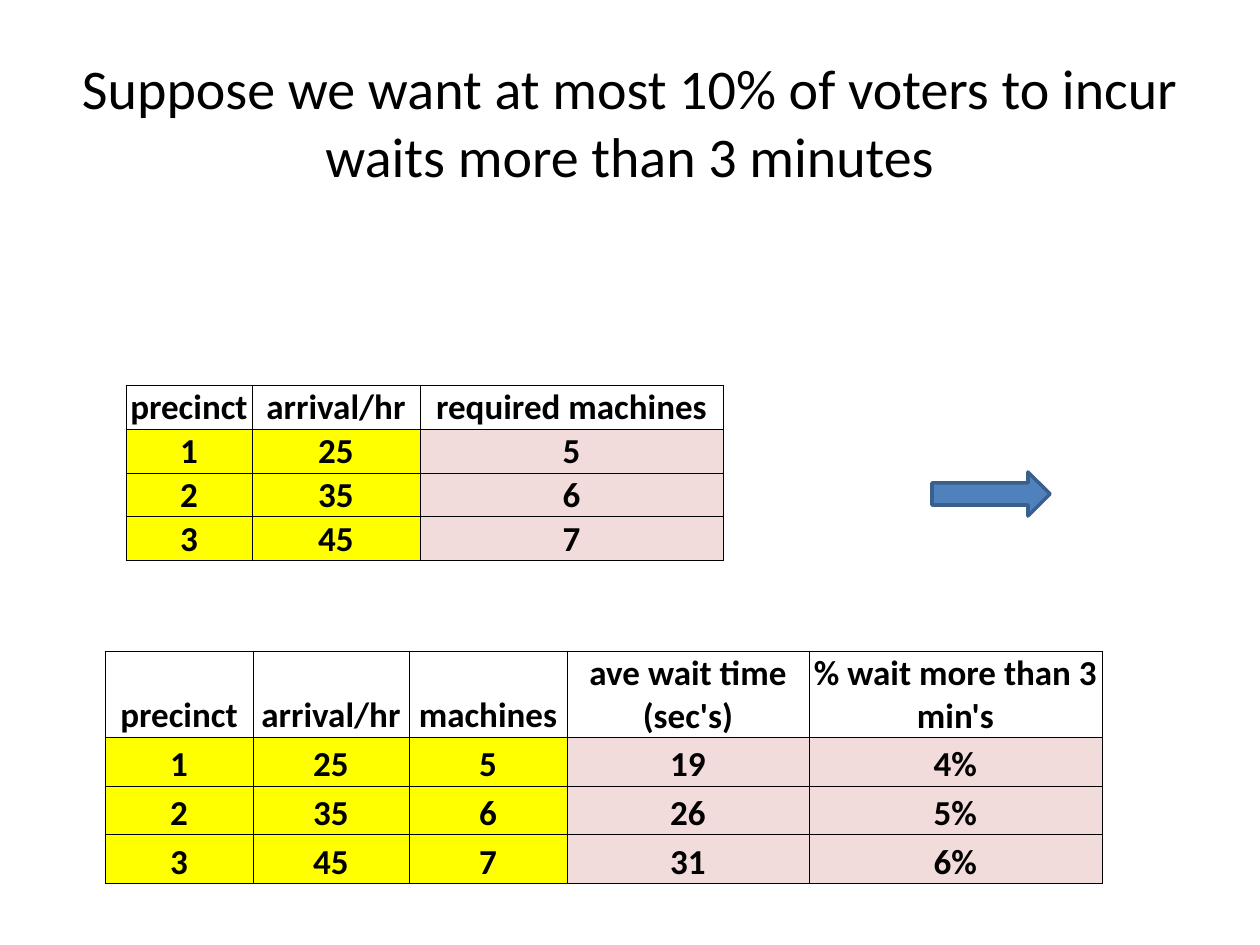
from lxml.etree import SubElement
from pptx import Presentation
from pptx.dml.color import RGBColor
from pptx.enum.shapes import MSO_SHAPE as Shape
from pptx.enum.text import MSO_ANCHOR as Anchor, PP_ALIGN as Align
from pptx.oxml.ns import qn
from pptx.util import Emu, Pt

PX = 914400 / 126
FONT = "Calibri"
COLORS = {
    "text": "000000",
    "border": "000000",
    "input": "FFFF00",
    "result": "F2DCDB",
    "arrow": "4F81BD",
    "arrow_line": "3A5F8C",
}


def px(length):
    """Turn a length in px into EMU."""
    return Emu(round(length * PX))


def color(name):
    """Look up a named colour."""
    return RGBColor.from_string(COLORS[name])


def style_paragraph(paragraph, size, bold=False):
    """Centre a paragraph and set its font."""
    paragraph.alignment = Align.CENTER
    font = paragraph.font
    font.name, font.size, font.bold = FONT, Pt(size), bold
    font.color.rgb = color("text")


def add_title(slide, box, text):
    """Write the slide title in the middle of its box."""
    frame = slide.shapes.add_textbox(*map(px, box)).text_frame
    frame.word_wrap = True
    frame.vertical_anchor = Anchor.MIDDLE
    frame.text = text
    style_paragraph(frame.paragraphs[0], 32)


def add_arrow(slide, box):
    """Draw the block arrow that points right."""
    arrow = slide.shapes.add_shape(Shape.RIGHT_ARROW, *map(px, box))
    arrow.shadow.inherit = False
    arrow.fill.solid()
    arrow.fill.fore_color.rgb = color("arrow")
    arrow.line.color.rgb = color("arrow_line")
    arrow.line.width = Pt(2)


def add_borders(cell):
    """Give a cell a thin line on all four sides."""
    properties = cell._tc.get_or_add_tcPr()
    for side in ("a:lnL", "a:lnR", "a:lnT", "a:lnB"):
        line = SubElement(properties, qn(side), w=str(Pt(0.5)))
        fill = SubElement(line, qn("a:solidFill"))
        SubElement(fill, qn("a:srgbClr"), val=COLORS["border"])


def style_cell(cell, fill_name):
    """Set the margins, borders, fill and font of a cell."""
    cell.margin_left = cell.margin_right = cell.margin_top = px(1)
    cell.margin_bottom = 0
    cell.vertical_anchor = Anchor.BOTTOM
    add_borders(cell)
    if fill_name:
        cell.fill.solid()
        cell.fill.fore_color.rgb = color(fill_name)
    else:
        cell.fill.background()
    style_paragraph(cell.text_frame.paragraphs[0], 20, bold=True)


def add_precinct_table(slide, left, top, widths, heights, rows, input_count):
    """Build a table whose first input_count columns hold inputs, the rest results."""
    box = map(px, (left, top, sum(widths), sum(heights)))
    table = slide.shapes.add_table(len(rows), len(widths), *box).table
    table.horz_banding = table.first_row = False
    for column, width in zip(table.columns, widths):
        column.width = px(width)
    for row, height in zip(table.rows, heights):
        row.height = px(height)
    for row_index, values in enumerate(rows):
        for column_index, value in enumerate(values):
            cell = table.cell(row_index, column_index)
            cell.text = value
            kind = "input" if column_index < input_count else "result"
            style_cell(cell, kind if row_index else None)


def build_slide(presentation):
    """Place the title, the arrow and both tables."""
    slide = presentation.slides.add_slide(presentation.slide_layouts[6])
    add_title(slide, (42, 42, 1176, 158),
              "Suppose we want at most 10% of voters to incur waits more than 3 minutes")
    add_arrow(slide, (932, 472, 118, 44))
    add_precinct_table(slide, 126, 385, (126, 168, 303), [44] * 4, [
        ("precinct", "arrival/hr", "required machines"),
        ("1", "25", "5"),
        ("2", "35", "6"),
        ("3", "45", "7"),
    ], input_count=2)
    add_precinct_table(slide, 105, 651, (148, 156, 158, 242, 293), [86] + [49] * 3, [
        ("precinct", "arrival/hr", "machines", "ave wait time (sec's)",
         "% wait more than 3 min's"),
        ("1", "25", "5", "19", "4%"),
        ("2", "35", "6", "26", "5%"),
        ("3", "45", "7", "31", "6%"),
    ], input_count=3)


def main():
    """Build the presentation and save it."""
    presentation = Presentation()
    presentation.slide_width, presentation.slide_height = px(1260), px(945)
    build_slide(presentation)
    presentation.save("out.pptx")


if __name__ == "__main__":
    main()
